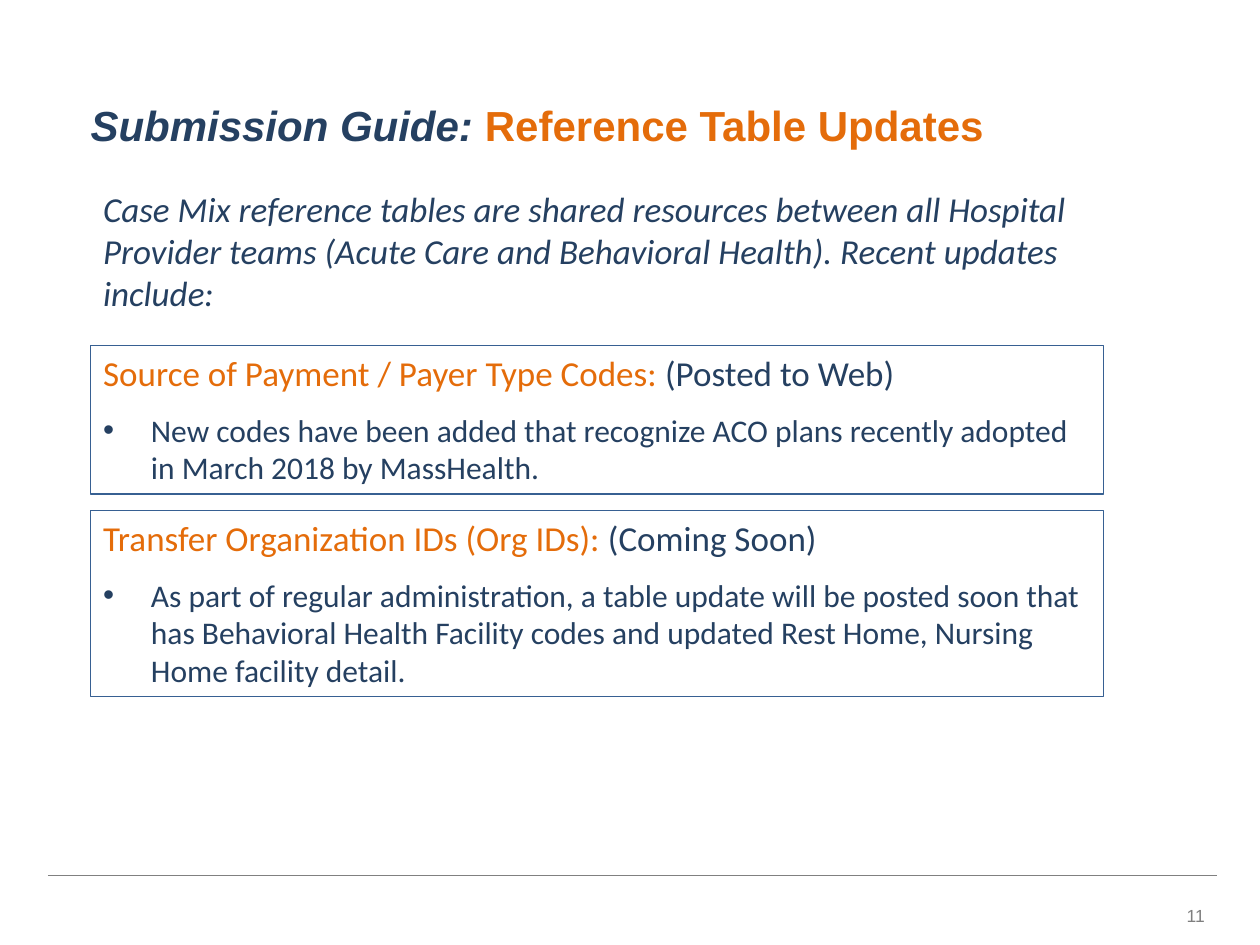
from pptx import Presentation
from pptx.dml.color import RGBColor
from pptx.enum.shapes import MSO_CONNECTOR, MSO_SHAPE
from pptx.enum.text import MSO_ANCHOR, PP_ALIGN
from pptx.oxml.ns import qn
from pptx.util import Inches, Pt

NAVY = RGBColor(0x25, 0x40, 0x61)
ORANGE = RGBColor(0xE4, 0x6C, 0x0A)
BLUE = RGBColor(0x37, 0x60, 0x92)
GRAY = RGBColor(0x80, 0x80, 0x80)
NUMBER_GRAY = RGBColor(0x7F, 0x7F, 0x7F)
RECT = MSO_SHAPE.RECTANGLE
STRAIGHT = MSO_CONNECTOR.STRAIGHT
LEFT, RIGHT = PP_ALIGN.LEFT, PP_ALIGN.RIGHT
TOP, MIDDLE = MSO_ANCHOR.TOP, MSO_ANCHOR.MIDDLE

TITLE = ("Submission Guide: ", "Reference Table Updates")
INTRO = ("Case Mix reference tables are shared resources between all Hospital "
         "Provider teams (Acute Care and Behavioral Health). Recent updates include:")
PAGE = "11"
UPDATES = [  # heading, status, detail, box height
    ("Source of Payment / Payer Type Codes: ", "(Posted to Web)",
     "New codes have been added that recognize ACO plans recently adopted "
     "in March 2018 by MassHealth.", 1.18),
    ("Transfer Organization IDs (Org IDs): ", "(Coming Soon)",
     "As part of regular administration, a table update will be posted soon that "
     "has Behavioral Health Facility codes and updated Rest Home, Nursing Home "
     "facility detail.", 1.48),
]
BOX_LEFT, BOX_TOP, BOX_WIDTH, BOX_GAP = 0.72, 2.74, 8.04, 0.13
INDENT = 0.38


def add_run(p, text, size, color, font="Calibri", bold=False, italic=False):
    r = p.add_run()
    r.text = text
    r.font.name, r.font.size, r.font.color.rgb = font, Pt(size), color
    r.font.bold, r.font.italic = bold, italic


def add_text(s, box, anchor=TOP, align=LEFT):
    """Add a wrapping text box and return its first paragraph."""
    tf = s.shapes.add_textbox(*map(Inches, box)).text_frame
    tf.word_wrap = True
    tf.vertical_anchor = anchor
    tf.paragraphs[0].alignment = align
    return tf.paragraphs[0]


def set_bullet(p):
    pPr = p._p.get_or_add_pPr()
    pPr.set("marL", str(Inches(INDENT)))
    pPr.set("indent", str(-Inches(INDENT)))
    font = pPr.makeelement(qn("a:buFont"), {"typeface": "Arial"})
    pPr.append(font)
    pPr.append(pPr.makeelement(qn("a:buChar"), {"char": "•"}))


def add_update(s, top, heading, status, detail, height):
    sp = s.shapes.add_shape(RECT, *map(Inches, (BOX_LEFT, top, BOX_WIDTH, height)))
    sp.shadow.inherit = False
    sp.fill.background()
    sp.line.color.rgb = BLUE
    sp.line.width = Pt(0.75)
    tf = sp.text_frame
    tf.word_wrap = True
    tf.vertical_anchor = TOP
    p = tf.paragraphs[0]
    p.alignment = LEFT
    add_run(p, heading, 20, ORANGE)
    add_run(p, status, 20, NAVY)
    p = tf.add_paragraph()
    p.alignment = LEFT
    p.space_before = Pt(9.75)
    set_bullet(p)
    add_run(p, detail, 18, NAVY)


def main():
    prs = Presentation()
    prs.slide_width, prs.slide_height = Inches(10), Inches(7.5)
    s = prs.slides.add_slide(prs.slide_layouts[6])

    rule = s.shapes.add_connector(STRAIGHT, *map(Inches, (0.38, 6.95, 9.66, 6.95)))
    rule.line.color.rgb = GRAY
    rule.line.width = Pt(0.5)
    spPr = rule._element.spPr
    spPr.append(spPr.makeelement(qn("a:effectLst"), {}))

    p = add_text(s, (0.62, 0.64, 8.79, 0.7), MIDDLE)
    add_run(p, TITLE[0], 24, NAVY, "Arial", bold=True, italic=True)
    add_run(p, TITLE[1], 24, ORANGE, "Arial", bold=True)

    p = add_text(s, (7.33, 7.07, 2.33, 0.4), MIDDLE, RIGHT)
    add_run(p, PAGE, 10, NUMBER_GRAY, "Arial")

    p = add_text(s, (BOX_LEFT, 1.44, 8.14, 1.11))
    add_run(p, INTRO, 20, NAVY, italic=True)

    top = BOX_TOP
    for heading, status, detail, height in UPDATES:
        add_update(s, top, heading, status, detail, height)
        top += height + BOX_GAP

    prs.save("out.pptx")


if __name__ == "__main__":
    main()
